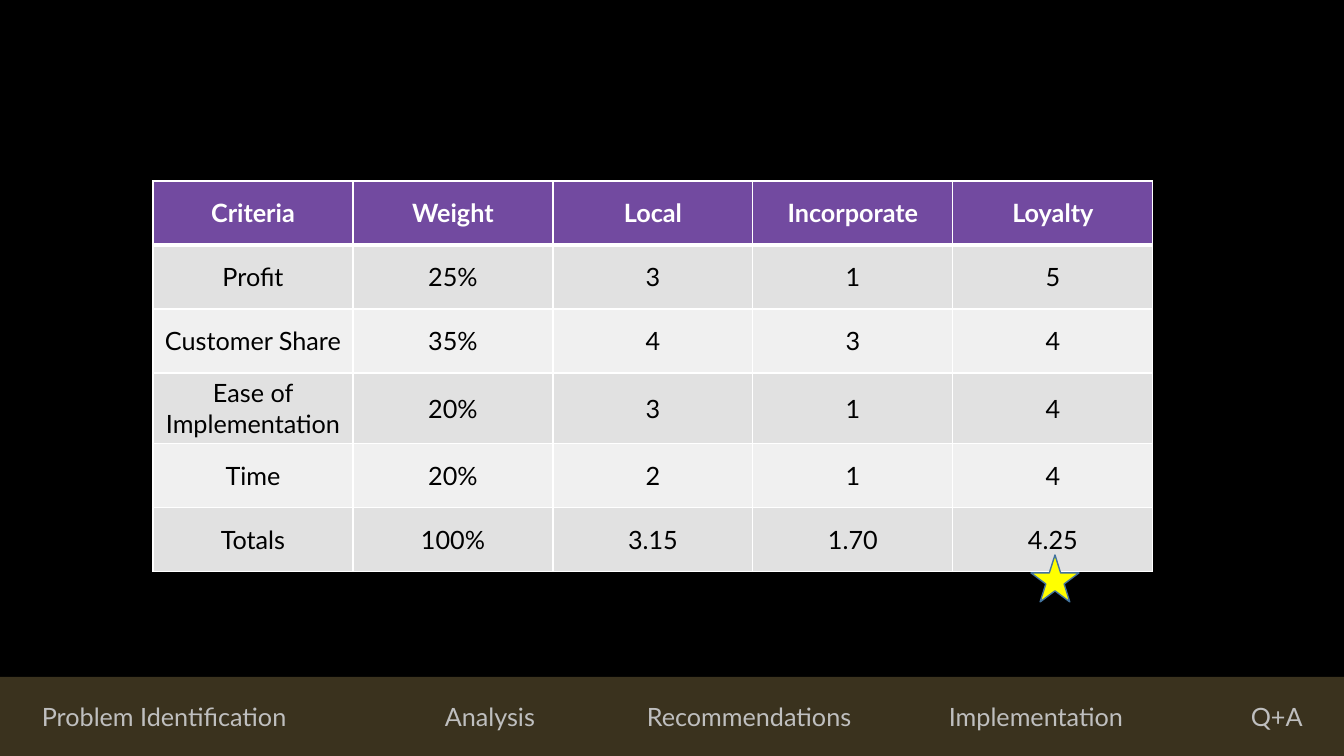
from lxml import etree
from pptx import Presentation, util as u
from pptx.dml import color
from pptx.enum import shapes, text
from pptx.oxml import ns

EMU_PER_PX = 914400 / 100.8
FONT = "Lato"
WHITE, BLACK, PURPLE = "FFFFFF", "000000", "724AA0"
BANDS = ("E1E1E1", "F0F0F0")
CRITERIA = [
    ("Criteria", "Weight", "Local", "Incorporate", "Loyalty"),
    ("Profit", "25%", "3", "1", "5"),
    ("Customer Share", "35%", "4", "3", "4"),
    ("Ease of Implementation", "20%", "3", "1", "4"),
    ("Time", "20%", "2", "1", "4"),
    ("Totals", "100%", "3.15", "1.70", "4.25"),
]
ROW_HEIGHTS = (64, 64, 64, 70, 64, 64)
SECTIONS = ("Problem Identification", "Analysis", "Recommendations", "Implementation", "Q+A")
SECTION_TABS = (403, 605, 907, 1209)


def px(length):
    """Turn pixels into EMU."""
    return u.Emu(round(length * EMU_PER_PX))


def paint(fill, value):
    """Give a fill a solid hex colour."""
    fill.solid()
    fill.fore_color.rgb = color.RGBColor.from_string(value)


def add_element(parent, tag, **attributes):
    """Append a DrawingML element and return it."""
    names = {name: str(value) for name, value in attributes.items()}
    return etree.SubElement(parent, ns.qn(f"a:{tag}"), names)


def format_text(paragraph, value, alignment, bold=False):
    """Align a paragraph and format its runs."""
    paragraph.alignment = alignment
    for run in paragraph.runs:
        run.font.name = FONT
        run.font.size = u.Pt(18)
        run.font.bold = bold
        paint(run.font.fill, value)


def add_border(cell, side, points):
    """Draw one white side of a table cell."""
    properties = cell._tc.get_or_add_tcPr()
    line = add_element(properties, f"ln{side}", w=u.Pt(points))
    add_element(add_element(line, "solidFill"), "srgbClr", val=WHITE)


def add_criteria_table(slide, left, top, width):
    """Build the weighted decision table."""
    frame = slide.shapes.add_table(
        len(CRITERIA), len(CRITERIA[0]), px(left), px(top), px(width), px(sum(ROW_HEIGHTS)))
    table = frame.table
    table.horz_banding = False
    for row_index, values in enumerate(CRITERIA):
        header = row_index == 0
        table.rows[row_index].height = px(ROW_HEIGHTS[row_index])
        for column_index, value in enumerate(values):
            cell = table.cell(row_index, column_index)
            cell.text_frame.text = value
            cell.vertical_anchor = text.MSO_ANCHOR.MIDDLE
            format_text(cell.text_frame.paragraphs[0], WHITE if header else BLACK,
                        text.PP_ALIGN.CENTER, header)
            add_border(cell, "L", 1)
            add_border(cell, "R", 1)
            add_border(cell, "T", 3 if row_index == 1 else 1)
            add_border(cell, "B", 3 if header else 1)
            paint(cell.fill, PURPLE if header else BANDS[(row_index - 1) % 2])


def add_winner_star(slide, left, top, width, height):
    """Mark the best total with a star."""
    star = slide.shapes.add_shape(
        shapes.MSO_SHAPE.STAR_5_POINT, px(left), px(top), px(width), px(height))
    star.shadow.inherit = False
    paint(star.fill, "FFFF00")
    paint(star.line.fill, "43739E")
    star.line.width = u.Pt(1)


def add_section_bar(slide, left, top, width, height):
    """Build the translucent bar that lists the sections."""
    bar = slide.shapes.add_shape(
        shapes.MSO_SHAPE.ROUNDED_RECTANGLE, px(left), px(top), px(width), px(height))
    bar.shadow.inherit = False
    paint(bar.fill, "B1985D")
    add_element(bar.fill._xPr.find(".//" + ns.qn("a:srgbClr")), "alpha", val=33000)
    bar.line.fill.background()
    frame = bar.text_frame
    frame.margin_left, frame.margin_right = px(70), 0
    frame.vertical_anchor = text.MSO_ANCHOR.MIDDLE
    frame.text = "\t".join(SECTIONS)
    paragraph = frame.paragraphs[0]
    tabs = add_element(paragraph._p.get_or_add_pPr(), "tabLst")
    for position in SECTION_TABS:
        add_element(tabs, "tab", pos=px(position), algn="l")
    format_text(paragraph, "BFBFBF", text.PP_ALIGN.LEFT)


def main():
    """Build and save the slide."""
    presentation = Presentation()
    presentation.slide_width, presentation.slide_height = px(1344), px(756)
    slide = presentation.slides.add_slide(presentation.slide_layouts[6])
    paint(slide.background.fill, BLACK)
    add_section_bar(slide, -32, 677, 1407, 79)
    add_criteria_table(slide, 153, 181, 1000)
    add_winner_star(slide, 1031, 555, 48, 47)
    presentation.save("out.pptx")


if __name__ == "__main__":
    main()
